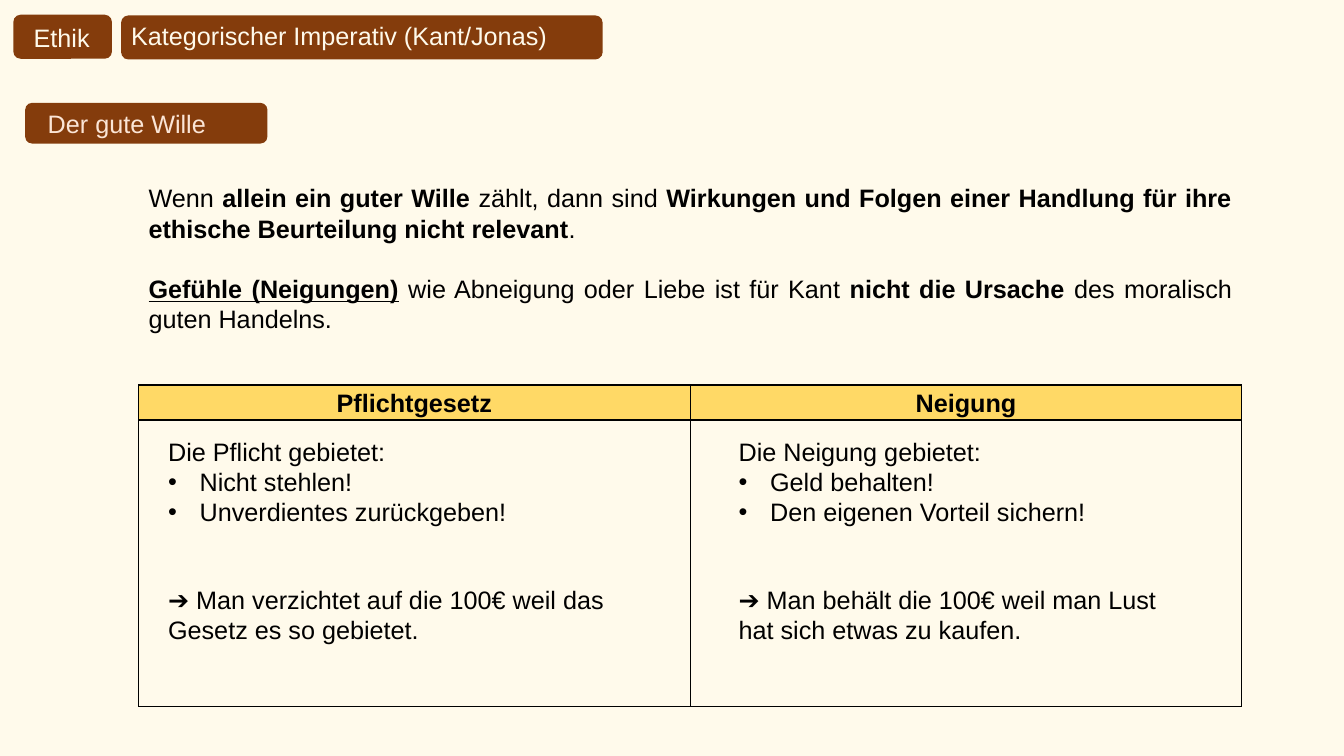
from dataclasses import dataclass

from lxml import etree
from pptx import Presentation
from pptx import util as u
from pptx.dml.color import RGBColor
from pptx.enum import shapes, text
from pptx.oxml import parse_xml
from pptx.oxml.ns import nsdecls, qn


@dataclass(frozen=True)
class Theme:
    font: str = "Arial"
    size: int = 18
    paper: str = "FFFAEB"
    brown: str = "843C0C"
    peach: str = "FBE5D6"
    gold: str = "FFD966"
    ink: str = "000000"


class SlideBuilder:
    def __init__(self, page, theme):
        self.page = page
        self.theme = theme
        page.background.fill.solid()
        page.background.fill.fore_color.rgb = RGBColor.from_string(theme.paper)

    def banner(self, *place):
        shape = self.page.shapes.add_shape(
            shapes.MSO_SHAPE.ROUNDED_RECTANGLE, *map(u.Pt, place))
        shape.shadow.inherit = False
        shape.fill.solid()
        shape.fill.fore_color.rgb = RGBColor.from_string(self.theme.brown)
        shape.line.fill.background()

    def span(self, para, wording, color=None, style=""):
        """Add a run; style may hold b for bold and u for underline."""
        span = para.add_run()
        span.text = wording
        span.font.name = self.theme.font
        span.font.size = u.Pt(self.theme.size)
        span.font.bold = "b" in style
        span.font.underline = "u" in style
        span.font.color.rgb = RGBColor.from_string(color or self.theme.ink)
        return span

    def text_box(self, *place):
        box = self.page.shapes.add_textbox(*map(u.Pt, place))
        box.text_frame.word_wrap = True
        return box.text_frame

    def label(self, wording, color, *place):
        frame = self.text_box(*place)
        frame.vertical_anchor = text.MSO_ANCHOR.MIDDLE
        return self.span(frame.paragraphs[0], wording, color)

    def text_shadow(self, span):
        fill = span.font.fill._xPr.find(qn("a:solidFill"))
        fill.addnext(parse_xml(
            f'<a:effectLst {nsdecls("a")}><a:outerShdw blurRad="38100" '
            'dist="38100" dir="2700000"><a:srgbClr val="000000">'
            '<a:alpha val="43000"/></a:srgbClr></a:outerShdw></a:effectLst>'))

    def prose(self, paragraphs, gap, *place):
        frame = self.text_box(*place)
        for number, spans in enumerate(paragraphs):
            para = frame.add_paragraph() if number else frame.paragraphs[0]
            para.alignment = text.PP_ALIGN.JUSTIFY
            para.space_before = u.Pt(gap if number else 0)
            for wording, style in spans:
                self.span(para, wording, style=style)

    def bullet_list(self, heading, items, *place):
        frame = self.text_box(*place)
        self.span(frame.paragraphs[0], heading)
        for item in items:
            para = frame.add_paragraph()
            self.span(para, item)
            props = para._p.get_or_add_pPr()
            indent = u.Pt(22.5)
            props.set("marL", str(indent))
            props.set("indent", str(-indent))
            etree.SubElement(props, qn("a:buFont"), typeface=self.theme.font)
            etree.SubElement(props, qn("a:buChar"), char="•")

    def border(self, cell):
        props = cell._tc.get_or_add_tcPr()
        for order, side in enumerate("LRTB"):
            props.insert(order, parse_xml(
                f'<a:ln{side} {nsdecls("a")} w="{u.Pt(1)}"><a:solidFill>'
                f'<a:srgbClr val="{self.theme.ink}"/></a:solidFill></a:ln{side}>'))

    def comparison_table(self, headings, row_heights, *place):
        """Draw a heading row above one row of empty framed cells."""
        table = self.page.shapes.add_table(
            len(row_heights), len(headings), *map(u.Pt, place)).table
        table.first_row = table.horz_banding = False
        for row, height in zip(table.rows, row_heights):
            row.height = u.Pt(height)
        for cell in table.iter_cells():
            cell.fill.background()
            self.border(cell)
        for column, heading in enumerate(headings):
            cell = table.cell(0, column)
            cell.fill.solid()
            cell.fill.fore_color.rgb = RGBColor.from_string(self.theme.gold)
            cell.margin_left = cell.margin_right = u.Pt(5)
            cell.margin_top = cell.margin_bottom = 0
            para = cell.text_frame.paragraphs[0]
            para.alignment = text.PP_ALIGN.CENTER
            para.line_spacing = 1.15
            para.space_after = u.Pt(6.2)
            self.span(para, heading, style="b")


INTRO = [
    [("Wenn ", ""), ("allein ein guter Wille", "b"), (" zählt, dann sind ", ""),
     ("Wirkungen und Folgen einer Handlung für ihre ethische Beurteilung "
      "nicht relevant", "b"), (".", "")],
    [("Gefühle (Neigungen)", "bu"),
     (" wie Abneigung oder Liebe ist für Kant", ""),
     (" nicht die Ursache ", "b"), ("des moralisch guten Handelns.", "")],
]

COLUMNS = [
    ("Pflichtgesetz", "Die Pflicht gebietet:",
     ["Nicht stehlen!", "Unverdientes zurückgeben!"],
     "➔ Man verzichtet auf die 100€ weil das Gesetz es so gebietet."),
    ("Neigung", "Die Neigung gebietet:",
     ["Geld behalten!", "Den eigenen Vorteil sichern!"],
     "➔ Man behält die 100€ weil man Lust hat sich etwas zu kaufen."),
]


def main():
    deck = Presentation()
    deck.slide_width, deck.slide_height = u.Pt(960), u.Pt(540)
    theme = Theme()
    slide = SlideBuilder(deck.slides.add_slide(deck.slide_layouts[6]), theme)

    slide.banner(18, 73.5, 173, 29)
    slide.label("Der gute Wille", theme.peach, 27, 73.5, 487, 29)

    slide.prose(INTRO, 21.6, 99, 127, 788, 116.5)
    slide.comparison_table([column[0] for column in COLUMNS], [25, 204.5],
                           99, 275, 788, 229.5)
    for number, (_, heading, duties, result) in enumerate(COLUMNS):
        left = 113 + number * 407.5
        slide.bullet_list(heading, duties, left, 308, 339, 73)
        slide.label(result, theme.ink, left, 413.5, 339, 51)

    slide.banner(86.5, 11, 344, 31.5)
    slide.banner(9.5, 10.5, 70.5, 31.5)
    title = slide.label("Kategorischer Imperativ (Kant/Jonas)", theme.paper,
                        86.5, 2.5, 425.5, 46)
    slide.text_shadow(title)
    slide.label("Ethik", theme.paper, 17, 12.5, 63.5, 29)

    deck.save("out.pptx")


if __name__ == "__main__":
    main()
